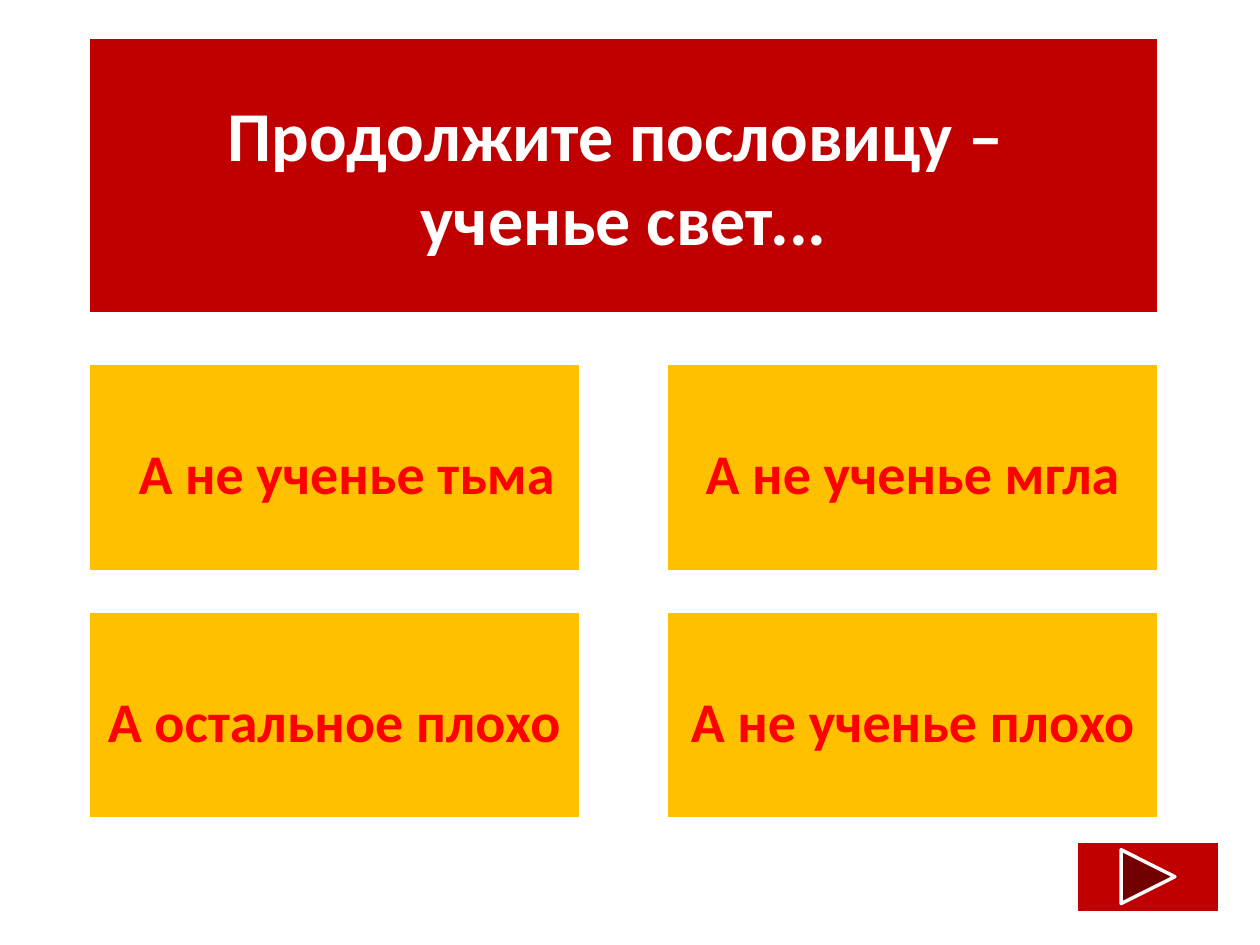
from pptx import Presentation
from pptx.dml.color import RGBColor
from pptx.enum.shapes import MSO_SHAPE
from pptx.enum.text import MSO_ANCHOR, MSO_AUTO_SIZE, PP_ALIGN
from pptx.util import Pt

RED = RGBColor(0xC0, 0x00, 0x00)
BRIGHT_RED = RGBColor(0xFF, 0x00, 0x00)
GOLD = RGBColor(0xFF, 0xC0, 0x00)
WHITE = RGBColor(0xFF, 0xFF, 0xFF)

QUESTION = ["Продолжите пословицу – ", "ученье свет..."]
# answer text, extra left inset in points
ANSWERS = [
    [("А не ученье тьма", 14), ("А не ученье мгла", 0)],
    [("А остальное плохо", 0), ("А не ученье плохо", 0)],
]

LEFT, WIDTH = 50.4, 612
QUESTION_TOP, QUESTION_H = 21, 158.4
ANSWER_TOP, ANSWER_W, ANSWER_H = 207.7, 281.5, 118.8
COL_STEP = WIDTH - ANSWER_W
ROW_STEP = 141.5
NEXT_BUTTON = (615, 480.5, 82, 41)
INSET = 7.2


def paint(shape, fill):
    shape.fill.solid()
    shape.fill.fore_color.rgb = fill
    shape.line.color.rgb = WHITE
    shape.line.width = Pt(2)


def add_block(s, kind, box, fill):
    shape = s.shapes.add_shape(kind, *map(Pt, box))
    shape.shadow.inherit = False
    paint(shape, fill)
    return shape


def write_lines(tf, lines, size, color):
    tf.word_wrap = True
    tf.auto_size = MSO_AUTO_SIZE.NONE
    tf.vertical_anchor = MSO_ANCHOR.MIDDLE
    for i, line in enumerate(lines):
        p = tf.add_paragraph() if i else tf.paragraphs[0]
        p.alignment = PP_ALIGN.CENTER
        r = p.add_run()
        r.text = line
        r.font.name = "Calibri"
        r.font.size = Pt(size)
        r.font.bold = True
        r.font.color.rgb = color


prs = Presentation()
prs.slide_width, prs.slide_height = Pt(720), Pt(540)
s = prs.slides.add_slide(prs.slide_layouts[5])

title = s.shapes.title
title.left, title.top = Pt(LEFT), Pt(QUESTION_TOP)
title.width, title.height = Pt(WIDTH), Pt(QUESTION_H)
paint(title, RED)
write_lines(title.text_frame, QUESTION, 40, WHITE)

for row, answers in enumerate(ANSWERS):
    for col, (answer, extra) in enumerate(answers):
        box = (LEFT + col * COL_STEP, ANSWER_TOP + row * ROW_STEP, ANSWER_W, ANSWER_H)
        tf = add_block(s, MSO_SHAPE.RECTANGLE, box, GOLD).text_frame
        write_lines(tf, [answer], 32, BRIGHT_RED)
        tf.margin_left = Pt(INSET + extra)
        tf.paragraphs[0].line_spacing = 1.15
        tf.paragraphs[0].space_after = Pt(10)

add_block(s, MSO_SHAPE.ACTION_BUTTON_FORWARD_OR_NEXT, NEXT_BUTTON, RED)

prs.save("out.pptx")
